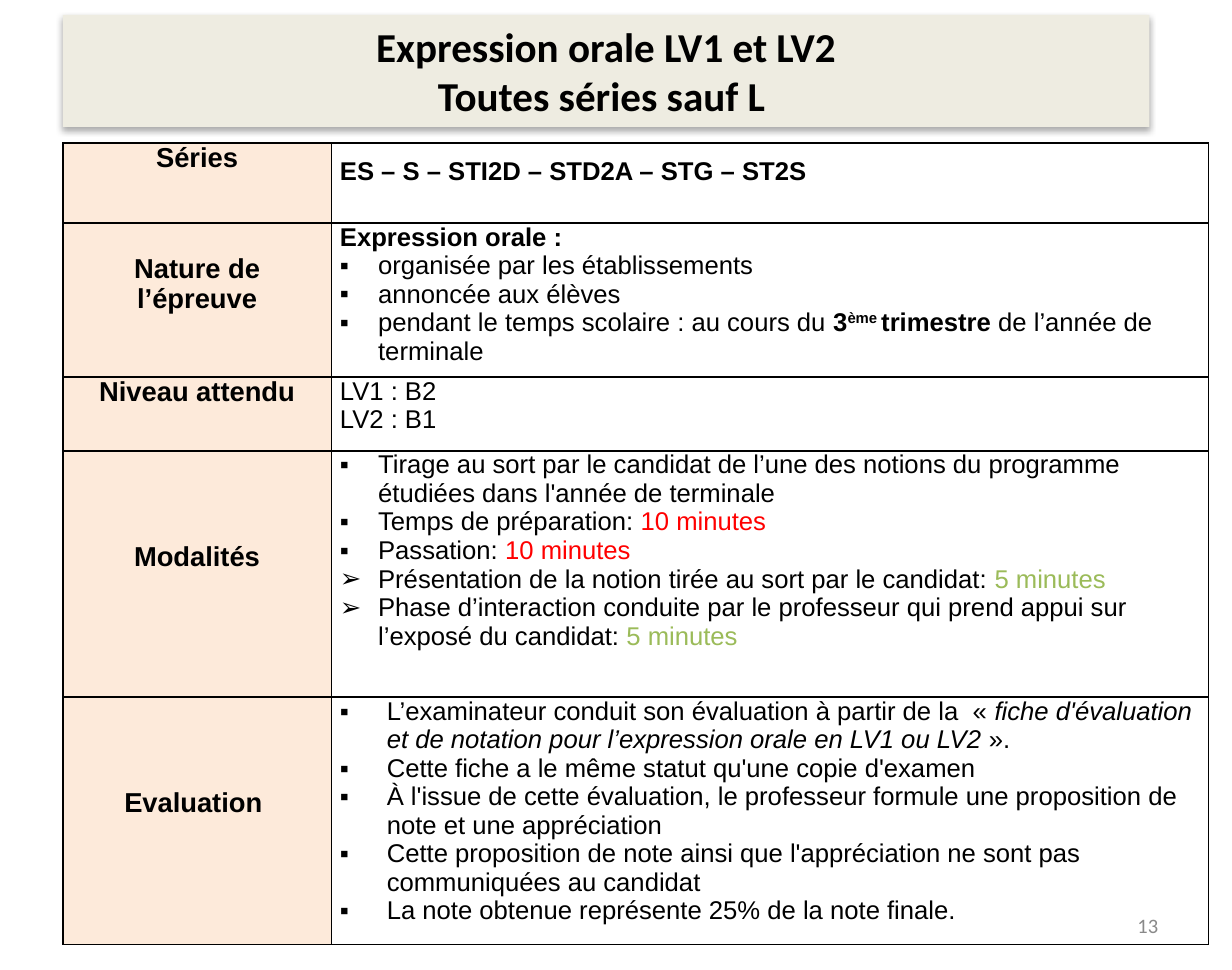
import pptx
import pptx.dml.color
import pptx.enum.text
import pptx.oxml
import pptx.oxml.ns
import pptx.util
from pptx.util import Inches

RGB = pptx.dml.color.RGBColor
BLACK = RGB(0, 0, 0)
WHITE = RGB(255, 255, 255)
BEIGE = RGB(0xEE, 0xEC, 0xE1)
PEACH = RGB(0xFD, 0xEA, 0xDA)
RED = RGB(255, 0, 0)
GREEN = RGB(0x9B, 0xBB, 0x59)
GREY = RGB(0x89, 0x89, 0x89)

ALIGN = pptx.enum.text.PP_ALIGN
ANCHOR = pptx.enum.text.MSO_ANCHOR
NS = pptx.oxml.ns.nsdecls("a")

COLS = [2.18, 7.12]
BOLD = {"bold": True}
SUPER = {"bold": True, "raised": True}
SLANT = {"italic": True}
HOT = {"color": RED}
SOFT = {"color": GREEN}

# Each row: label, space above the label, height, bullet indent, body.
# Each body line: bullet mark, then its runs as text or (text, style).
ROWS = [
    ("Séries", 0, 0.65, 0, [
        ("", ("ES – S – STI2D – STD2A – STG – ST2S", BOLD)),
    ]),
    ("Nature de l’épreuve", 0.25, 1.25, 0.31, [
        ("", ("Expression orale :", BOLD)),
        ("▪", "organisée par les établissements"),
        ("▪", "annoncée aux élèves"),
        ("▪", "pendant le temps scolaire : au cours du ", ("3", BOLD),
         ("ème ", SUPER), ("trimestre ", BOLD), "de l’année de terminale"),
    ]),
    ("Niveau attendu", 0, 0.6, 0, [
        ("", "LV1 : B2"),
        ("", "LV2 : B1"),
    ]),
    ("Modalités", 0.74, 2.0, 0.31, [
        ("▪", "Tirage au sort par le candidat de l’une des notions du "
              "programme étudiées dans l'année de terminale"),
        ("▪", "Temps de préparation: ", ("10 minutes", HOT)),
        ("▪", "Passation: ", ("10 minutes", HOT)),
        ("➢", "Présentation de la notion tirée au sort par le candidat: ",
         ("5 minutes", SOFT)),
        ("➢", "Phase d’interaction conduite par le professeur qui prend "
              "appui sur l’exposé du candidat: ", ("5 minutes", SOFT)),
    ]),
    ("Evaluation ", 0.74, 2.01, 0.38, [
        ("▪", "L’examinateur conduit son évaluation à partir de la  « ",
         ("fiche d'évaluation et de notation pour l’expression orale en "
          "LV1 ou LV2 ", SLANT), "»."),
        ("▪", "Cette fiche a le même statut qu'une copie d'examen"),
        ("▪", "À l'issue de cette évaluation, le professeur formule une "
              "proposition de note et une appréciation"),
        ("▪", "Cette proposition de note ainsi que l'appréciation ne sont "
              "pas communiquées au candidat"),
        ("▪", "La note obtenue représente 25% de la note finale."),
    ]),
]


def style(run, size, name="Arial", color=BLACK, bold=False, italic=False,
          raised=False):
    font = run.font
    font.size = pptx.util.Pt(size)
    font.name = name
    font.color.rgb = color
    font.bold = bold
    font.italic = italic
    if raised:
        run._r.get_or_add_rPr().set("baseline", "30000")


def add_mark(para, mark, indent):
    """Give the paragraph a bullet with a hanging indent."""
    props = para._p.get_or_add_pPr()
    props.set("marL", str(Inches(indent)))
    props.set("indent", str(-Inches(indent)))
    props.append(pptx.oxml.parse_xml(f'<a:buFont {NS} typeface="Arial"/>'))
    props.append(pptx.oxml.parse_xml(f'<a:buChar {NS} char="{mark}"/>'))


def add_edges(cell):
    """Draw a thin black border; it must precede the fill in the cell XML."""
    props = cell._tc.get_or_add_tcPr()
    for spot, side in enumerate("LRTB"):
        props.insert(spot, pptx.oxml.parse_xml(
            f'<a:ln{side} {NS} w="12700"><a:solidFill>'
            f'<a:srgbClr val="{BLACK}"/></a:solidFill></a:ln{side}>'))


def set_cell(cell, fill, top=0):
    cell.fill.solid()
    cell.fill.fore_color.rgb = fill
    cell.margin_left = cell.margin_right = Inches(0.07)
    cell.margin_top = Inches(top)
    cell.margin_bottom = 0
    add_edges(cell)


def fill_label(cell, label, top):
    set_cell(cell, PEACH, top)
    para = cell.text_frame.paragraphs[0]
    para.text = label
    para.alignment = ALIGN.CENTER
    style(para.runs[0], 16, bold=True)


def fill_body(cell, lines, indent):
    set_cell(cell, WHITE)
    frame = cell.text_frame
    for spot, (mark, *parts) in enumerate(lines):
        para = frame.add_paragraph() if spot else frame.paragraphs[0]
        if mark:
            add_mark(para, mark, indent)
        for part in parts:
            text, look = (part, {}) if isinstance(part, str) else part
            run = para.add_run()
            run.text = text
            style(run, 15, **look)


def add_title(slide):
    title = slide.shapes.title
    title.left, title.top = Inches(0.51), Inches(0.12)
    title.width, title.height = Inches(8.82), Inches(0.91)
    title.fill.solid()
    title.fill.fore_color.rgb = BEIGE
    title._element.spPr.append(pptx.oxml.parse_xml(
        f'<a:effectLst {NS}><a:outerShdw blurRad="44450" dist="27940" '
        f'dir="5400000" algn="ctr" rotWithShape="0"><a:srgbClr val="{BLACK}">'
        '<a:alpha val="32000"/></a:srgbClr></a:outerShdw></a:effectLst>'))
    frame = title.text_frame
    frame.text = "Expression orale LV1 et LV2\nToutes séries sauf L "
    frame.auto_size = pptx.enum.text.MSO_AUTO_SIZE.NONE
    frame.vertical_anchor = ANCHOR.MIDDLE
    for para in frame.paragraphs:
        para.alignment = ALIGN.CENTER
        style(para.runs[0], 24, "Calibri", bold=True)


def add_grid(slide):
    high = sum(row[2] for row in ROWS)
    table = slide.shapes.add_table(
        len(ROWS), len(COLS), Inches(0.51), Inches(1.16),
        Inches(sum(COLS)), Inches(high)).table
    table.first_row = table.horz_banding = False
    for col, width in zip(table.columns, COLS):
        col.width = Inches(width)
    for spot, (label, top, height, indent, lines) in enumerate(ROWS):
        table.rows[spot].height = Inches(height)
        fill_label(table.cell(spot, 0), label, top)
        fill_body(table.cell(spot, 1), lines, indent)
    table.cell(0, 1).text_frame.paragraphs[0].line_spacing = 1.5


def add_number(slide):
    box = slide.shapes.add_textbox(
        Inches(7.17), Inches(7.3), Inches(2.33), Inches(0.42))
    frame = box.text_frame
    frame.word_wrap = True
    frame.vertical_anchor = ANCHOR.MIDDLE
    frame.text = "13"
    para = frame.paragraphs[0]
    para.alignment = ALIGN.RIGHT
    style(para.runs[0], 12, "Calibri", GREY)


def main():
    deck = pptx.Presentation()
    deck.slide_width, deck.slide_height = Inches(10), Inches(63 / 8)
    slide = deck.slides.add_slide(deck.slide_layouts[5])
    add_title(slide)
    add_grid(slide)
    add_number(slide)
    deck.save("out.pptx")


if __name__ == "__main__":
    main()
